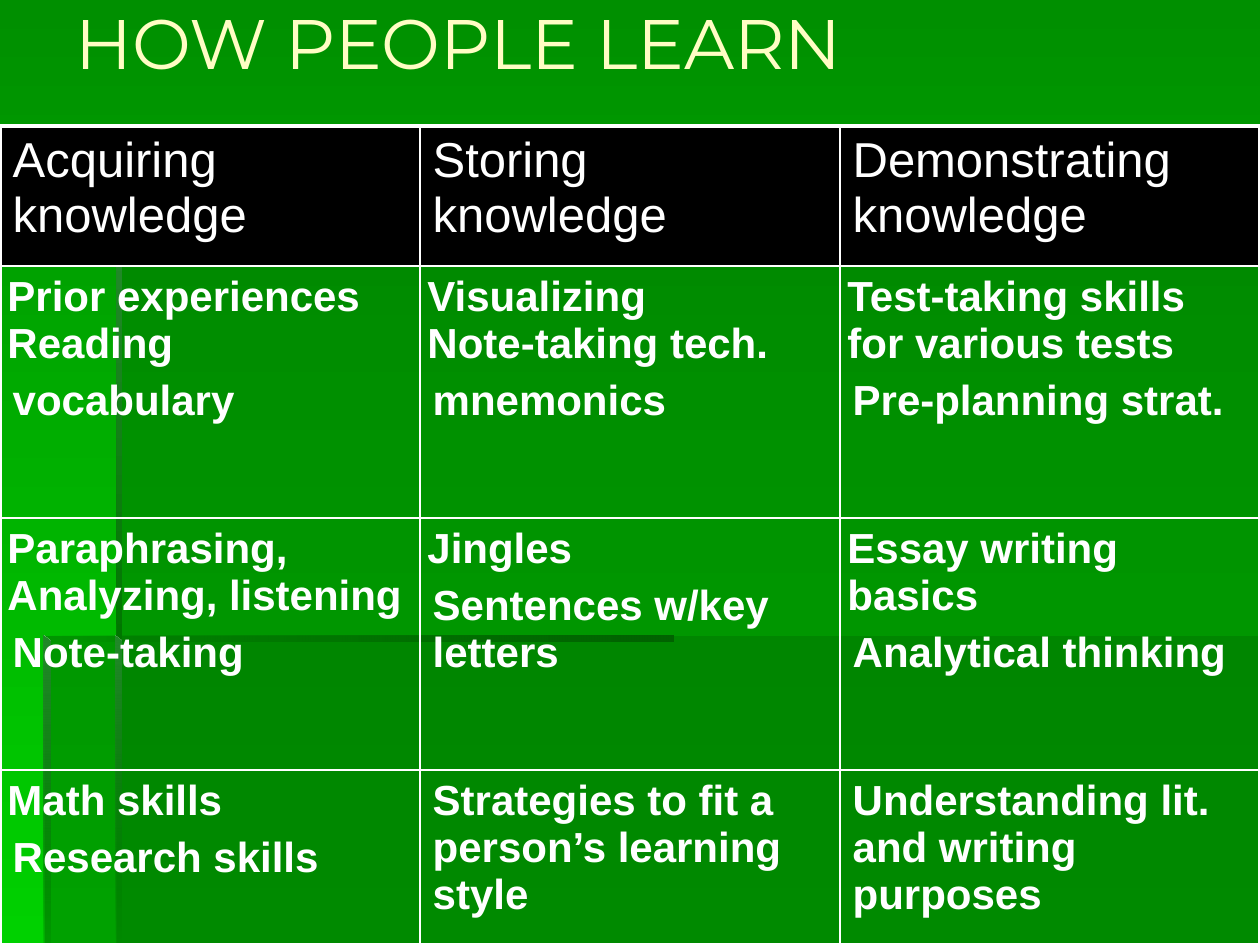
import dataclasses

import pptx
import pptx.dml.color
import pptx.enum.shapes
import pptx.enum.text
import pptx.oxml
import pptx.oxml.ns
import pptx.util

Pt = pptx.util.Pt
qn = pptx.oxml.ns.qn


@dataclasses.dataclass(frozen=True)
class Theme:
    """Colours, fonts and sizes of the slide."""
    glow: str = "00D100"
    field: str = "008F00"
    panel: str = "007600"
    shade: str = "006300"
    edge: str = "228929"
    title: str = "FFFDC4"
    text: str = "FFFFFF"
    header: str = "000000"
    title_font: str = "Montserrat"
    body_font: str = "Arial"
    title_size: int = 40
    header_size: int = 28
    body_size: int = 24
    inset: float = 4.3
    indent: float = 3
    thin: float = 1
    thick: float = 2.25


THEME = Theme()
WIDTH, HEIGHT = 720, 540
HEADINGS = ["Acquiring knowledge", "Storing knowledge", "Demonstrating knowledge"]
SKILLS = [
    [["Prior experiences", "Reading", "vocabulary"],
     ["Visualizing", "Note-taking tech.", "mnemonics"],
     ["Test-taking skills for various tests", "Pre-planning strat."]],
    [["Paraphrasing,", "Analyzing, listening", "Note-taking"],
     ["Jingles", "Sentences w/key letters"],
     ["Essay writing basics", "Analytical thinking"]],
    [["Math skills", "Research skills"],
     ["Strategies to fit a person’s learning style"],
     ["Understanding lit. and writing purposes"]],
]
ROW_HEIGHTS = [80, 144, 144, 100]


def rgb(code):
    """Return the colour for a hex code."""
    return pptx.dml.color.RGBColor.from_string(code)


def fill_gradient(fill, start, end, angle):
    """Fill with a two-colour linear gradient."""
    fill.gradient()
    fill.gradient_angle = angle
    for stop, code, position in zip(fill.gradient_stops, (start, end), (0, 1)):
        stop.color.rgb = rgb(code)
        stop.position = position


def finish(shape, alpha):
    """Remove line and shadow and set the opacity of the first colour."""
    shape.line.fill.background()
    shape.shadow.inherit = False
    color = next(shape.element.iter(qn("a:srgbClr")))
    color.append(pptx.oxml.parse_xml(
        f'<a:alpha {pptx.oxml.ns.nsdecls("a")} val="{alpha * 1000}"/>'))


def add_bar(page, left, top, width, height):
    """Add a rectangle."""
    kind = pptx.enum.shapes.MSO_SHAPE.RECTANGLE
    return page.shapes.add_shape(kind, Pt(left), Pt(top), Pt(width), Pt(height))


def add_outline(page, points):
    """Add a closed polygon."""
    corners = [(Pt(x), Pt(y)) for x, y in points]
    builder = page.shapes.build_freeform(*corners[0])
    builder.add_line_segments(corners[1:], close=True)
    return builder.convert_to_shape()


def add_panels(page, left, top, width, height):
    """Add one layer of stepped translucent panels with bevelled edges."""
    right, bottom = left + width, top + height
    inner, step = left + 41, top + 219.5
    panels = [
        add_bar(page, inner, step, right - inner, bottom - step),
        add_outline(page, [(inner + 1, step), (left, step), (left, bottom),
                           (right, bottom), (right, top), (inner + 1, top)]),
    ]
    for panel in panels:
        panel.fill.solid()
        panel.fill.fore_color.rgb = rgb(THEME.panel)
        finish(panel, 30)

    for x, y, length in ((inner, top, 576), (left - 0.5, step - 0.5, 360)):
        bar = add_bar(page, x, y, length, 3.6)
        fill_gradient(bar.fill, THEME.panel, THEME.shade, 0)
        finish(bar, 0)

    edges = [(inner, top, step + 3.5, 100),
             (inner - 0.5, step - 0.5, bottom, 0),
             (left - 0.5, step - 0.5, bottom, 10)]
    for x, y, base, alpha in edges:
        edge = add_outline(page, [(x, y), (x, base), (x + 3.6, base), (x + 3.6, y + 3.2)])
        fill_gradient(edge.fill, THEME.panel, THEME.edge, 90)
        finish(edge, alpha)


def set_insets(box):
    """Give a frame or cell equal margins."""
    box.margin_left = box.margin_right = Pt(THEME.inset)
    box.margin_top = box.margin_bottom = Pt(THEME.inset)


def style_para(para, font, size, color, bold, indent):
    """Format a left-aligned paragraph."""
    para.alignment = pptx.enum.text.PP_ALIGN.LEFT
    para._p.get_or_add_pPr().set("marL", str(Pt(indent)))
    para.font.name = font
    para.font.size = Pt(size)
    para.font.bold = bold
    para.font.color.rgb = rgb(color)


def place_title(page, left, top, width, height):
    """Place and format the title."""
    title = page.shapes.title
    title.left, title.top, title.width, title.height = map(Pt, (left, top, width, height))
    frame = title.text_frame
    frame.text = "HOW PEOPLE LEARN"
    frame.auto_size = pptx.enum.text.MSO_AUTO_SIZE.NONE
    frame.vertical_anchor = pptx.enum.text.MSO_ANCHOR.MIDDLE
    set_insets(frame)
    style_para(frame.paragraphs[0], THEME.title_font, THEME.title_size,
               THEME.title, False, THEME.indent)


def add_border(cell, side, width):
    """Draw one side of a cell."""
    cell._tc.get_or_add_tcPr().append(pptx.oxml.parse_xml(
        f'<a:ln{side} {pptx.oxml.ns.nsdecls("a")} w="{Pt(width)}"><a:solidFill>'
        f'<a:srgbClr val="{THEME.text}"/></a:solidFill></a:ln{side}>'))


def fill_cell(cell, lines, size, bold):
    """Write the lines of a cell, the last one indented and set apart."""
    set_insets(cell)
    frame = cell.text_frame
    for index, line in enumerate(lines):
        para = frame.add_paragraph() if index else frame.paragraphs[0]
        para.text = line
        last = index == len(lines) - 1
        style_para(para, THEME.body_font, size, THEME.text, bold,
                   THEME.indent if last else 0)
        para.space_before = Pt(6 if last and index else 0)


def add_skills_table(page, left, top, width, height):
    """Add the table of learning skills."""
    rows = [[[heading] for heading in HEADINGS]] + SKILLS
    last_row, last_column = len(rows) - 1, len(HEADINGS) - 1
    table = page.shapes.add_table(len(rows), len(HEADINGS), Pt(left), Pt(top),
                                  Pt(width), Pt(height)).table
    table.first_row = table.horz_banding = False
    for column in table.columns:
        column.width = Pt(width / len(HEADINGS))
    for row, row_height in zip(table.rows, ROW_HEIGHTS):
        row.height = Pt(row_height)
    for r, row in enumerate(rows):
        for c, lines in enumerate(row):
            cell = table.cell(r, c)
            outer = {"L": c == 0, "R": c == last_column, "T": r == 0, "B": r == last_row}
            for side, thick in outer.items():
                add_border(cell, side, THEME.thick if thick else THEME.thin)
            if r == 0:
                cell.fill.solid()
                cell.fill.fore_color.rgb = rgb(THEME.header)
                fill_cell(cell, lines, THEME.header_size, False)
            else:
                cell.fill.background()
                fill_cell(cell, lines, THEME.body_size, True)


def main():
    """Build and save the deck."""
    deck = pptx.Presentation()
    deck.slide_width, deck.slide_height = Pt(WIDTH), Pt(HEIGHT)
    page = deck.slides.add_slide(deck.slide_layouts[5])
    fill_gradient(page.background.fill, THEME.glow, THEME.field, 90)
    for _ in range(2):
        add_panels(page, 25.5, 144, WIDTH - 25.5, HEIGHT - 144)
    place_title(page, 36, 0, 660, 48)
    add_skills_table(page, 0, 72, WIDTH, HEIGHT - 72)
    deck.save("out.pptx")


if __name__ == "__main__":
    main()
